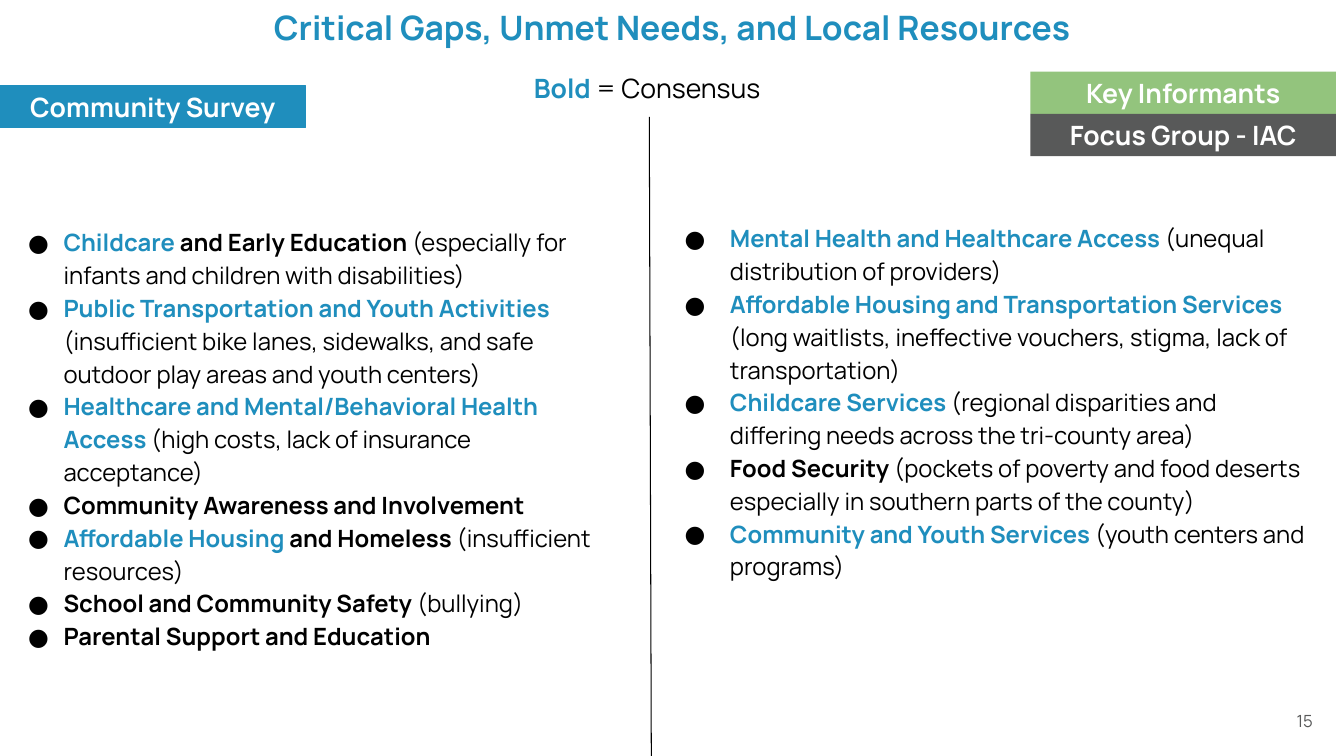
from lxml.etree import SubElement
from pptx import Presentation
from pptx.dml.color import RGBColor
from pptx.enum.shapes import MSO_CONNECTOR, MSO_SHAPE
from pptx.enum.text import MSO_ANCHOR, MSO_AUTO_SIZE, PP_ALIGN
from pptx.oxml.ns import qn
from pptx.util import Inches, Pt

BLUE, GREEN, GRAY = "1F8EBD", "93C47D", "585959"
BLACK, WHITE = "000000", "FFFFFF"


def color(hex):
    return RGBColor.from_string(hex)


def write(shape, rows, size, align=PP_ALIGN.LEFT, space=1.0, inset=(0.1, 0.05),
          anchor=MSO_ANCHOR.TOP, hang=None):
    frame = shape.text_frame
    frame.word_wrap = True
    frame.auto_size = MSO_AUTO_SIZE.NONE
    frame.vertical_anchor = anchor
    frame.margin_left = frame.margin_right = Inches(inset[0])
    frame.margin_top = frame.margin_bottom = Inches(inset[1])
    for n, row in enumerate(rows):
        para = frame.add_paragraph() if n else frame.paragraphs[0]
        para.alignment = align
        para.line_spacing = space
        para.space_before = para.space_after = Pt(0)
        if hang:
            props = para._p.get_or_add_pPr()
            props.set("marL", str(Inches(hang[0])))
            props.set("indent", str(-Inches(hang[1])))
            tint = SubElement(props, qn("a:buClr"))
            SubElement(tint, qn("a:srgbClr"), val=BLACK)
            SubElement(props, qn("a:buFont"), typeface="Manrope")
            SubElement(props, qn("a:buChar"), char="●")
        for text, hue, bold in row:
            run = para.add_run()
            run.text = text
            run.font.name = "Manrope"
            run.font.size = Pt(size)
            run.font.bold = bold
            run.font.color.rgb = color(hue)


deck = Presentation()
deck.slide_width, deck.slide_height = Inches(13.33), Inches(7.5)
slide = deck.slides.add_slide(deck.slide_layouts[3])
shapes = slide.shapes

title = shapes.title
title.left, title.top = Inches(0.18), Inches(0.06)
title.width, title.height = Inches(12.97), Inches(0.56)
write(title, [[("Critical Gaps, Unmet Needs, and Local Resources", BLUE, True)]], 24,
      align=PP_ALIGN.CENTER, inset=(0, 0.01))

survey = [
    [("Childcare", BLUE, True), (" and Early Education ", BLACK, True),
     ("(especially for infants and children with disabilities)", BLACK, False)],
    [("Public Transportation and Youth Activities ", BLUE, True),
     ("(insufficient bike lanes, sidewalks, and safe outdoor play areas and youth centers)",
      BLACK, False)],
    [("Healthcare and Mental/Behavioral Health Access ", BLUE, True),
     ("(high costs, lack of insurance acceptance)", BLACK, False)],
    [("Community Awareness and Involvement", BLACK, True)],
    [("Affordable Housing", BLUE, True), (" and Homeless ", BLACK, True),
     ("(insufficient resources)", BLACK, False)],
    [("School and Community Safety ", BLACK, True), ("(bullying)", BLACK, False)],
    [("Parental Support and Education", BLACK, True)],
]
experts = [
    [("Mental Health and Healthcare Access ", BLUE, True),
     ("(unequal distribution of providers)", BLACK, False)],
    [("Affordable Housing and Transportation Services ", BLUE, True),
     ("(long waitlists, ineffective vouchers, stigma, lack of transportation)", BLACK, False)],
    [("Childcare Services", BLUE, True),
     (" (regional disparities and differing needs across the tri-county area)", BLACK, False)],
    [("Food Security ", BLACK, True),
     ("(pockets of poverty and food deserts especially in southern parts of the county)",
      BLACK, False)],
    [("Community and Youth Services ", BLUE, True),
     ("(youth centers and programs)", BLACK, False)],
]
lists = [
    (1, survey, (0, 2.09, 6.16, 4.5), (0.5, 0.35)),
    (2, experts, (6.44, 2.05, 6.71, 4.18), (0.67, 0.45)),
]
for key, rows, place, hang in lists:
    body = slide.placeholders[key]
    body.left, body.top, body.width, body.height = map(Inches, place)
    write(body, rows, 17, space=1.15, inset=(0.13, 0.13), hang=hang)

rule = shapes.add_connector(MSO_CONNECTOR.STRAIGHT, Inches(6.44), Inches(1.16),
                            Inches(6.46), Inches(7.54))
rule.line.color.rgb = color(BLACK)
rule.line.width = Pt(0.75)
SubElement(rule._element.spPr, qn("a:effectLst"))

tags = [
    ("Community Survey", 0, 0.85, BLUE),
    ("Key Informants", 10.22, 0.71, GREEN),
    ("Focus Group - IAC", 10.22, 1.13, GRAY),
]
for text, left, top, hue in tags:
    tag = shapes.add_shape(MSO_SHAPE.RECTANGLE, Inches(left), Inches(top),
                           Inches(3.03), Inches(0.42))
    tag.shadow.inherit = False
    tag.fill.solid()
    tag.fill.fore_color.rgb = color(hue)
    if hue == BLUE:
        tag.line.color.rgb = color(hue)
        tag.line.width = Pt(0.75)
    else:
        tag.line.fill.background()
    write(tag, [[(text, WHITE, True)]], 19, align=PP_ALIGN.CENTER)

legend = shapes.add_textbox(Inches(4.26), Inches(0.54), Inches(4.37), Inches(0.59))
write(legend, [[("Bold ", BLUE, True), ("= Consensus ", BLACK, False)]], 19,
      align=PP_ALIGN.CENTER, space=1.15, inset=(0.13, 0.13))

number = shapes.add_textbox(Inches(10.12), Inches(6.95), Inches(3), Inches(0.4))
write(number, [[("15", GRAY, False)]], 12, align=PP_ALIGN.RIGHT, anchor=MSO_ANCHOR.MIDDLE)

deck.save("out.pptx")
